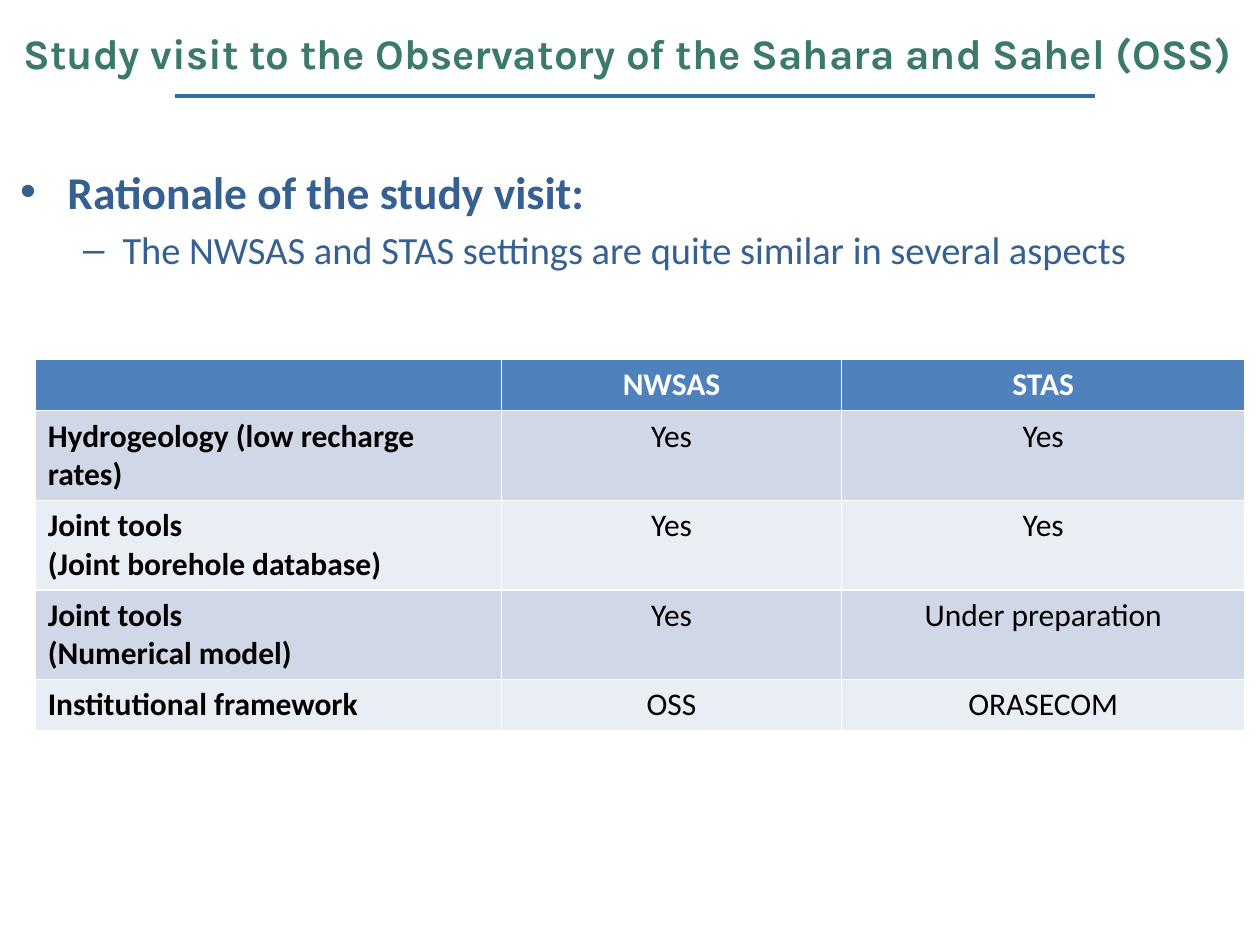
from dataclasses import dataclass

from lxml import etree
from pptx import Presentation, util as u
from pptx.dml.color import RGBColor
from pptx.enum import shapes, text
from pptx.oxml.ns import qn

TITLE = "Study visit to the Observatory of the Sahara and Sahel (OSS)"
RATIONALE = [
    (0, "Rationale of the study visit:"),
    (1, "The NWSAS and STAS settings are quite similar in several aspects"),
]
COMPARISON = [
    ([""], "NWSAS", "STAS"),
    (["Hydrogeology (low recharge rates)"], "Yes", "Yes"),
    (["Joint tools", "(Joint borehole database)"], "Yes", "Yes"),
    (["Joint tools", "(Numerical model)"], "Yes", "Under preparation"),
    (["Institutional framework"], "OSS", "ORASECOM"),
]
COLUMN_WIDTHS = (3.7, 2.7, 3.2)
ROW_HEIGHT = 0.41


@dataclass(frozen=True)
class Theme:
    title_font: str = "Karla"
    body_font: str = "Calibri"
    title: str = "3B7A6A"
    rule: str = "366CA6"
    body: str = "376092"
    header: str = "4F81BD"
    bands: tuple = ("E9EDF4", "D0D8E8")
    light: str = "FFFFFF"
    dark: str = "000000"
    title_size: int = 24
    body_sizes: tuple = (26, 22)
    table_size: int = 18


THEME = Theme()
ALIGN = text.PP_ALIGN


def write(paragraph, wording, *, size, color, font=THEME.body_font,
          bold=False, align=None):
    run = paragraph.add_run()
    run.text = wording
    run.font.name = font
    run.font.size = u.Pt(size)
    run.font.bold = bold
    run.font.color.rgb = RGBColor.from_string(color)
    paragraph.alignment = align


def paragraphs(frame, count):
    """Return the frame's first paragraph followed by enough new ones."""
    return [frame.paragraphs[0]] + [frame.add_paragraph() for _ in range(count - 1)]


def place(shape, left, top, width, height):
    shape.left, shape.top = u.Inches(left), u.Inches(top)
    shape.width, shape.height = u.Inches(width), u.Inches(height)


def add_heading(slide):
    heading = slide.shapes.title
    place(heading, 0, 0.21, 9.96, 0.42)
    frame = heading.text_frame
    frame.auto_size = text.MSO_AUTO_SIZE.NONE
    frame.word_wrap = True
    frame.vertical_anchor = text.MSO_ANCHOR.MIDDLE
    frame.margin_left = frame.margin_right = u.Inches(0.04)
    frame.margin_top = frame.margin_bottom = u.Inches(0.04)
    write(frame.paragraphs[0], TITLE, size=THEME.title_size, color=THEME.title,
          font=THEME.title_font, bold=True, align=ALIGN.CENTER)

    rule = slide.shapes.add_connector(
        shapes.MSO_CONNECTOR.STRAIGHT,
        u.Inches(1.39), u.Inches(0.76), u.Inches(8.69), u.Inches(0.76))
    rule.line.color.rgb = RGBColor.from_string(THEME.rule)
    rule.line.width = u.Pt(2)
    etree.SubElement(rule._element.spPr, qn("a:effectLst"))


def add_rationale(slide):
    rationale = slide.placeholders[1]
    place(rationale, 0.06, 1.25, 10, 2.8)
    frame = rationale.text_frame
    frame.auto_size = text.MSO_AUTO_SIZE.NONE
    for paragraph, (level, wording) in zip(paragraphs(frame, len(RATIONALE)), RATIONALE):
        paragraph.level = level
        write(paragraph, wording, size=THEME.body_sizes[level],
              color=THEME.body, bold=level == 0)


def add_comparison(slide):
    """Add the table; its default style draws the white borders."""
    table = slide.shapes.add_table(
        len(COMPARISON), len(COLUMN_WIDTHS), u.Inches(0.28), u.Inches(2.85),
        u.Inches(sum(COLUMN_WIDTHS)), u.Inches(ROW_HEIGHT * len(COMPARISON))).table
    for column, width in zip(table.columns, COLUMN_WIDTHS):
        column.width = u.Inches(width)
    for r, (aspect, *values) in enumerate(COMPARISON):
        for c, lines in enumerate([aspect] + [[value] for value in values]):
            cell = table.cell(r, c)
            cell.fill.solid()
            cell.fill.fore_color.rgb = RGBColor.from_string(
                THEME.bands[r % 2] if r else THEME.header)
            for paragraph, line in zip(paragraphs(cell.text_frame, len(lines)), lines):
                write(paragraph, line, size=THEME.table_size,
                      color=THEME.dark if r else THEME.light,
                      bold=r == 0 or c == 0,
                      align=ALIGN.CENTER if c else ALIGN.LEFT)


def main():
    deck = Presentation()
    deck.slide_width, deck.slide_height = u.Inches(10), u.Inches(7.5)
    slide = deck.slides.add_slide(deck.slide_layouts[1])
    add_heading(slide)
    add_rationale(slide)
    add_comparison(slide)
    deck.save("out.pptx")


if __name__ == "__main__":
    main()
